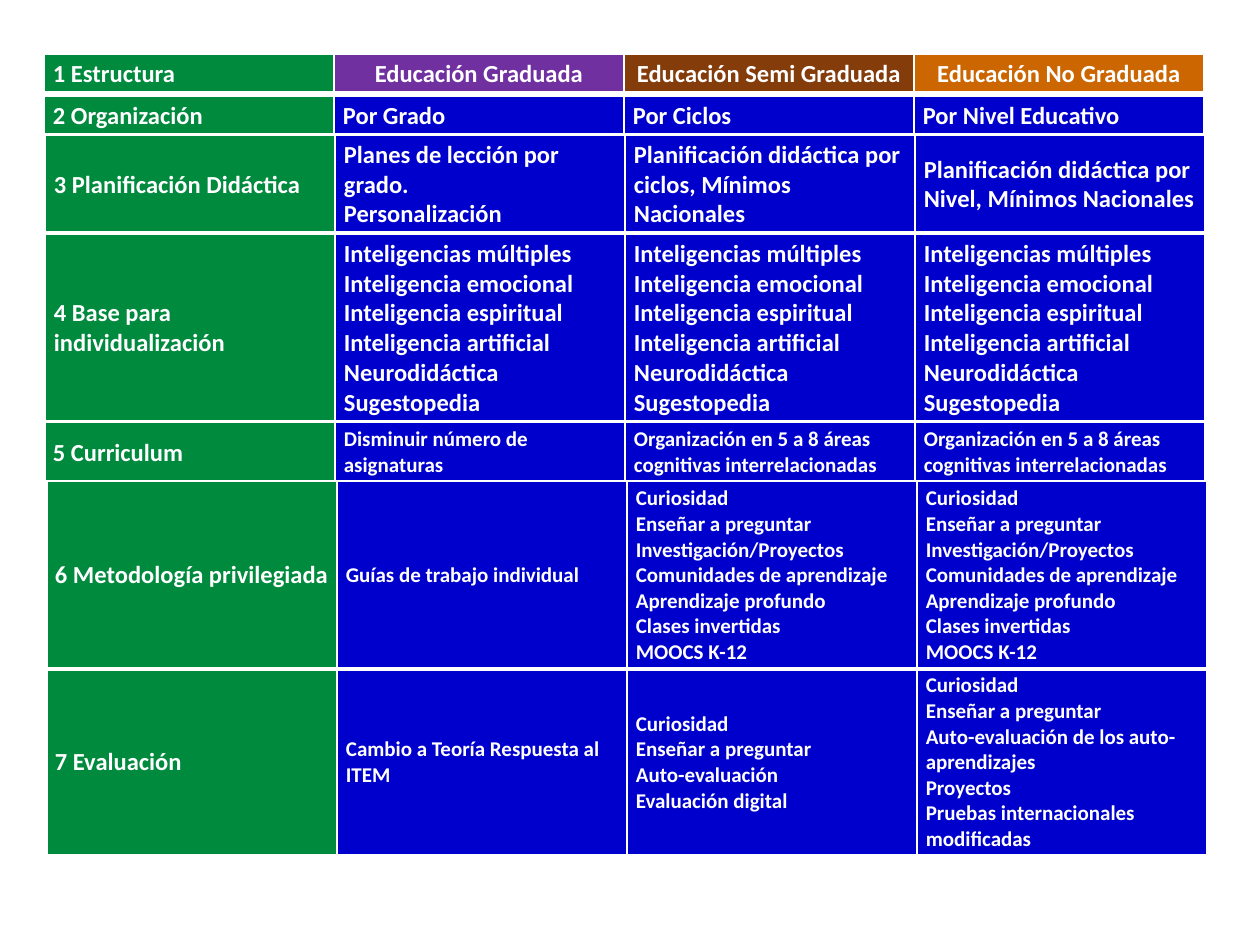
from lxml import etree
from pptx import Presentation
from pptx.dml.color import RGBColor
from pptx.enum.text import MSO_ANCHOR, PP_ALIGN
from pptx.oxml.ns import qn
from pptx.util import Pt

LEFT, CENTER = PP_ALIGN.LEFT, PP_ALIGN.CENTER
MIDDLE = MSO_ANCHOR.MIDDLE

WHITE = RGBColor(0xFF, 0xFF, 0xFF)
GREEN = RGBColor(0x00, 0x8A, 0x3E)
BLUE = RGBColor(0x00, 0x00, 0xCC)
PURPLE = RGBColor(0x70, 0x30, 0xA0)
BROWN = RGBColor(0x84, 0x3C, 0x0B)
ORANGE = RGBColor(0xCC, 0x66, 0x00)

# Content: one line of text per paragraph
INTELLIGENCES = """Inteligencias múltiples
Inteligencia emocional
Inteligencia espiritual
Inteligencia artificial
Neurodidáctica
Sugestopedia"""
AREAS = "Organización en 5 a 8 áreas cognitivas interrelacionadas"
METHODS = """Curiosidad
Enseñar a preguntar
Investigación/Proyectos
Comunidades de aprendizaje
Aprendizaje profundo
Clases invertidas
MOOCS K-12"""
SEMI_EVALUATION = """Curiosidad
Enseñar a preguntar
Auto-evaluación
Evaluación digital"""
OPEN_EVALUATION = """Curiosidad
Enseñar a preguntar
Auto-evaluación de los auto-aprendizajes
Proyectos
Pruebas internacionales modificadas"""

HEADER_FILLS = (GREEN, PURPLE, BROWN, ORANGE)
BODY_FILLS = (GREEN, BLUE, BLUE, BLUE)

# Bands: left, top, height (px), body text size, cell texts
BANDS = [
    (44, 54, 39, 14, ("1 Estructura", "Educación Graduada",
                      "Educación Semi Graduada", "Educación No Graduada")),
    (44, 96, 39, 14, ("2 Organización", "Por Grado", "Por Ciclos",
                      "Por Nivel Educativo")),
    (45, 135, 98, 14, ("3 Planificación Didáctica",
                       "Planes de lección por grado.\nPersonalización",
                       "Planificación didáctica por ciclos, Mínimos Nacionales",
                       "Planificación didáctica por Nivel, Mínimos Nacionales")),
    (45, 234, 186, 14, ("4 Base para individualización",) + (INTELLIGENCES,) * 3),
    (45, 422, 59, 12, ("5 Curriculum", "Disminuir número de asignaturas",
                       AREAS, AREAS)),
    (47, 668, 186, 12, ("7 Evaluación", "Cambio a Teoría Respuesta al ITEM",
                        SEMI_EVALUATION, OPEN_EVALUATION)),
    (47, 481, 186, 12, ("6 Metodología privilegiada",
                        "Guías de trabajo individual", METHODS, METHODS)),
]

COLUMN_WIDTH = 290
LABEL_SIZE = 14
BORDERS = {"a:lnL": 1, "a:lnR": 1, "a:lnT": 1, "a:lnB": 3}
SCALE = 914400 // 126


def px(n):
    return n * SCALE


def add_borders(cell):
    tcPr = cell._tc.get_or_add_tcPr()
    for tag, width in BORDERS.items():
        ln = etree.SubElement(tcPr, qn(tag), w=str(Pt(width)))
        fill = etree.SubElement(ln, qn("a:solidFill"))
        etree.SubElement(fill, qn("a:srgbClr"), val=str(WHITE))


def write(cell, text, size=14, align=LEFT, spacing=None, inset=(9, 5, 9, 4)):
    (cell.margin_left, cell.margin_top,
     cell.margin_right, cell.margin_bottom) = map(px, inset)
    tf = cell.text_frame
    for i, line in enumerate(text.split("\n")):
        p = tf.add_paragraph() if i else tf.paragraphs[0]
        p.alignment = align
        if spacing:
            p.line_spacing = spacing
        r = p.add_run()
        r.text = line
        r.font.name = "Calibri"
        r.font.size = Pt(size)
        r.font.bold = True
        r.font.color.rgb = WHITE


def add_band(s, left, top, height, size, texts):
    header = texts[0].startswith("1")
    table = s.shapes.add_table(1, len(texts), px(left), px(top),
                               px(COLUMN_WIDTH * len(texts)), px(height)).table
    table.first_row = table.horz_banding = False
    fills = HEADER_FILLS if header else BODY_FILLS
    for col, (text, color) in enumerate(zip(texts, fills)):
        table.columns[col].width = px(COLUMN_WIDTH)
        cell = table.cell(0, col)
        add_borders(cell)
        cell.fill.solid()
        cell.fill.fore_color.rgb = color
        cell.vertical_anchor = MIDDLE
        if col:
            write(cell, text, size=size, align=CENTER if header else LEFT)
        elif size < LABEL_SIZE:
            # Labels beside small text have tight insets
            write(cell, text, inset=(8, 0, 8, 0),
                  spacing=1.07 if text.startswith("5") else None)
        else:
            write(cell, text)


def main():
    prs = Presentation()
    prs.slide_width, prs.slide_height = px(1260), px(945)
    s = prs.slides.add_slide(prs.slide_layouts[6])
    for band in BANDS:
        add_band(s, *band)
    prs.save("out.pptx")


if __name__ == "__main__":
    main()
